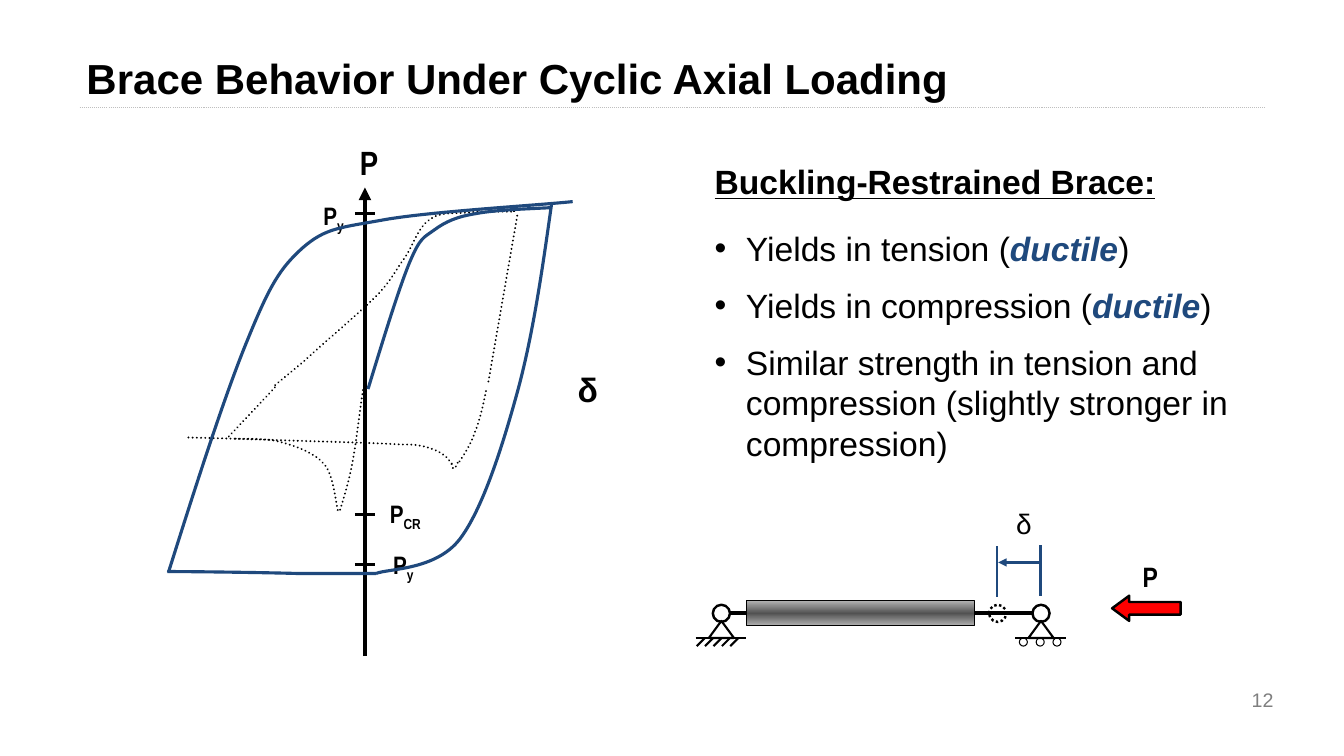
import copy

from lxml import etree
from pptx import Presentation
from pptx.dml.color import RGBColor
from pptx.enum import dml, shapes, text
from pptx.oxml.ns import qn
from pptx.util import Inches, Pt

BLACK = RGBColor(0x00, 0x00, 0x00)
BLUE = RGBColor(0x1F, 0x49, 0x7D)
RED = RGBColor(0xFF, 0x00, 0x00)
RULE_GREY = RGBColor(0xBF, 0xBF, 0xBF)
NUMBER_GREY = RGBColor(0x7F, 0x7F, 0x7F)
STEEL_LIGHT = RGBColor(0xB2, 0xB2, 0xB2)
STEEL_DARK = RGBColor(0x52, 0x52, 0x52)

SHAPE = shapes.MSO_SHAPE
ALIGN = text.PP_ALIGN

# A curve is a start point and triples of cubic Bezier points; two points make a line.
BUCKLING_CURVES = [
    [(2.27, 4.33), (2.73, 3.84)],
    [(4.82, 3.88), (4.79, 4.03), (4.76, 4.17), (4.71, 4.29),
     (4.67, 4.41), (4.61, 4.5), (4.55, 4.59)],
    [(3.6, 3.87), (3.56, 4.14), (3.53, 4.42), (3.49, 4.62),
     (3.45, 4.82), (3.4, 4.97), (3.37, 5.07)],
    [(3.35, 5.06), (3.33, 4.99), (3.31, 4.72), (3.22, 4.61),
     (3.13, 4.5), (2.95, 4.43), (2.8, 4.39),
     (2.65, 4.34), (2.4, 4.36), (2.3, 4.35)],
    [(2.73, 3.82), (2.85, 3.72), (2.98, 3.62), (3.14, 3.47),
     (3.31, 3.32), (3.6, 3.07), (3.75, 2.92),
     (3.89, 2.77), (3.93, 2.67), (4.02, 2.55),
     (4.1, 2.43), (4.15, 2.25), (4.26, 2.18),
     (4.36, 2.1), (4.49, 2.12), (4.63, 2.11),
     (4.77, 2.09), (4.93, 2.1), (5.09, 2.1)],
    [(5.13, 2.14), (4.84, 3.81)],
    [(4.48, 4.6), (4.45, 4.56), (4.42, 4.52), (4.38, 4.5),
     (4.34, 4.47), (4.28, 4.45), (4.21, 4.43),
     (4.15, 4.42), (4.15, 4.41), (3.98, 4.41),
     (3.81, 4.4), (3.53, 4.39), (3.18, 4.38),
     (2.82, 4.37), (2.33, 4.35), (1.84, 4.34)],
    [(4.54, 4.59), (4.53, 4.62), (4.51, 4.65), (4.5, 4.65),
     (4.49, 4.65), (4.48, 4.61), (4.48, 4.6)],
]
RESTRAINED_CURVES = [
    [(3.65, 3.86), (3.8, 3.37), (3.95, 2.88), (4.06, 2.61),
     (4.17, 2.35), (4.2, 2.36), (4.31, 2.28),
     (4.42, 2.2), (4.53, 2.15), (4.72, 2.12),
     (4.92, 2.08), (5.32, 2.07), (5.47, 2.06)],
    [(5.47, 2.03), (5.38, 2.67), (5.29, 3.3), (5.14, 3.86),
     (4.99, 4.41), (4.79, 5.05), (4.56, 5.35),
     (4.32, 5.66), (3.85, 5.64), (3.73, 5.69)],
    [(3.73, 5.69), (3.5, 5.69), (3.33, 5.69), (2.98, 5.69),
     (2.64, 5.68), (1.93, 5.67), (1.66, 5.67)],
    [(1.67, 5.68), (1.95, 4.79), (2.24, 3.89), (2.46, 3.36),
     (2.68, 2.82), (2.78, 2.66), (3, 2.46),
     (3.23, 2.26), (3.37, 2.26), (3.81, 2.18),
     (4.26, 2.1), (5.29, 2.04), (5.68, 2)],
]


def style_line(line, color, width, dotted=False):
    line.color.rgb = color
    line.width = Pt(width)
    if dotted:
        line.dash_style = dml.MSO_LINE.ROUND_DOT


def add_line(page, start, end, width=1.5, color=BLACK, dotted=False, arrow=False):
    """Draw a straight line, with an optional arrowhead at its end."""
    line = page.shapes.add_connector(
        shapes.MSO_CONNECTOR.STRAIGHT, *map(Inches, (*start, *end)))
    style_line(line.line, color, width, dotted)
    if arrow:
        etree.SubElement(line.line._ln, qn("a:tailEnd"), type="triangle")
    etree.SubElement(line._element.spPr, qn("a:effectLst"))


def add_shape(page, kind, left, top, width, height, line_width, fill=None, dotted=False):
    shape = page.shapes.add_shape(kind, *map(Inches, (left, top, width, height)))
    shape.shadow.inherit = False
    if fill is None:
        shape.fill.background()
    else:
        shape.fill.solid()
        shape.fill.fore_color.rgb = fill
    style_line(shape.line, BLACK, line_width, dotted)
    return shape


def add_curve(page, curve, color, width, dotted=False):
    """Draw the outline through the knots, then bend each segment to its controls."""
    points = [tuple(map(Inches, point)) for point in curve]
    knots = points if len(points) == 2 else points[::3]
    builder = page.shapes.build_freeform(*knots[0])
    builder.add_line_segments(knots[1:], close=False)
    shape = builder.convert_to_shape()
    shape.shadow.inherit = False
    shape.fill.background()
    style_line(shape.line, color, width, dotted)
    if len(points) > 2:
        segments = list(shape._element.spPr.iter(qn("a:lnTo")))
        for index, segment in enumerate(segments):
            segment.tag = qn("a:cubicBezTo")
            controls = points[3 * index + 1:3 * index + 3]
            for position, (x, y) in enumerate(controls):
                control = etree.Element(
                    qn("a:pt"), x=str(x - shape.left), y=str(y - shape.top))
                segment.insert(position, control)
    if dotted:
        shape.line._ln.set("cap", "rnd")


def add_text_frame(page, left, top, width, height):
    box = page.shapes.add_textbox(*map(Inches, (left, top, width, height)))
    box.text_frame.word_wrap = True
    return box.text_frame


def set_font(font, size, name="Arial", color=BLACK, bold=False):
    font.size, font.name, font.bold = Pt(size), name, bold
    font.color.rgb = color


def add_label(page, place, words, size, name="Arial", color=BLACK, bold=False,
              align=ALIGN.CENTER, subscript=None):
    frame = add_text_frame(page, *place)
    para = frame.paragraphs[0]
    para.alignment = align
    set_font(para.font, size, name, color, bold)
    para.add_run().text = words
    if subscript:
        span = para.add_run()
        span.text = subscript
        span._r.get_or_add_rPr().set("baseline", "-25000")
    return frame


def add_bullets(page, place, bullets):
    """Each bullet is (before, emphasis, after), or one plain part."""
    frame = add_text_frame(page, *place)
    for index, parts in enumerate(bullets):
        para = frame.add_paragraph() if index else frame.paragraphs[0]
        para.space_before = Pt(12 if index else 0)
        set_font(para.font, 24)
        properties = para._p.get_or_add_pPr()
        properties.set("marL", str(Inches(0.31)))
        properties.set("indent", str(Inches(-0.31)))
        defaults = properties.find(qn("a:defRPr"))
        defaults.addprevious(etree.Element(qn("a:buFont"), typeface="Arial"))
        defaults.addprevious(etree.Element(qn("a:buChar"), char="•"))
        for position, part in enumerate(parts):
            span = para.add_run()
            span.text = part
            if position == 1:
                span.font.bold = span.font.italic = True
                span.font.color.rgb = BLUE


def add_steel_tube(page, place):
    tube = add_shape(page, SHAPE.RECTANGLE, *place, 0.75)
    tube.fill.gradient()
    tube.fill.gradient_angle = 90
    stop_list = tube._element.spPr.find(".//" + qn("a:gsLst"))
    stop_list.insert(1, copy.deepcopy(stop_list[0]))
    colors = (STEEL_LIGHT, STEEL_DARK, STEEL_LIGHT)
    for index, (stop, color) in enumerate(zip(tube.fill.gradient_stops, colors)):
        stop.position = index / 2
        stop.color.rgb = color


def add_support(page, center):
    add_shape(page, SHAPE.ISOSCELES_TRIANGLE, center - 0.12, 6.16, 0.25, 0.17, 1.5)
    add_shape(page, SHAPE.OVAL, center - 0.08, 6, 0.17, 0.17, 1.75)
    add_line(page, (center - 0.25, 6.33), (center + 0.25, 6.33))


def draw_hysteresis(page):
    add_line(page, (3.62, 6.51), (3.62, 1.86), 3, arrow=True)
    for y in (2.12, 5.1, 5.6):
        add_line(page, (3.52, y), (3.72, y), 2.25)
    add_label(page, (3.37, 1.36, 0.58, 0.5), "P", 24, "Arial Narrow", bold=True)
    for left, top, subscript in ((2.91, 1.94, "y"), (3.62, 4.89, "CR"), (3.6, 5.4, "y")):
        add_label(page, (left, top, 0.8, 0.4), "P", 18, "Arial Narrow", bold=True,
                  subscript=subscript)
    add_label(page, (5.54, 3.61, 0.58, 0.5), "δ", 24, bold=True)
    add_line(page, (5.09, 2.09), (5.13, 2.09), dotted=True)
    for curve in BUCKLING_CURVES:
        add_curve(page, curve, BLACK, 1.5, dotted=True)
    for curve in RESTRAINED_CURVES:
        add_curve(page, curve, BLUE, 2.25)


def draw_brace(page):
    add_line(page, (7.24, 6.08), (10.24, 6.08), 3)
    for center in (7.15, 10.32):
        add_support(page, center)
    for index in range(5):
        x = 6.99 + index / 12
        add_line(page, (x, 6.33), (x - 0.08, 6.41))
    for index in range(3):
        add_shape(page, SHAPE.OVAL, 10.11 + index / 6, 6.33, 0.08, 0.08, 0.75)
    add_shape(page, SHAPE.OVAL, 9.81, 6, 0.17, 0.17, 1.75, dotted=True)
    add_steel_tube(page, (7.4, 5.96, 2.27, 0.25))
    for x, bottom in ((10.32, 5.91), (9.89, 5.92)):
        add_line(page, (x, bottom), (x, bottom - 0.5), color=BLUE)
    add_line(page, (10.32, 5.58), (9.9, 5.58), color=BLUE, arrow=True)
    add_label(page, (9.88, 4.98, 0.55, 0.43), "δ", 20)
    load = add_shape(page, SHAPE.LEFT_ARROW, 11.03, 5.91, 0.68, 0.25, 1.75, RED)
    load.adjustments[1] = 0.68
    add_label(page, (11.03, 5.5, 0.76, 0.43), "P", 20, "Arial Narrow", bold=True)


def main():
    deck = Presentation()
    deck.slide_width, deck.slide_height = Inches(13.33), Inches(7.5)
    page = deck.slides.add_slide(deck.slide_layouts[6])
    add_line(page, (0.79, 1.07), (12.55, 1.07), 0.75, RULE_GREY, dotted=True)
    add_label(page, (0.76, 0.47, 11.97, 0.68), "Brace Behavior Under Cyclic Axial Loading",
              30, bold=True, align=ALIGN.LEFT)
    number = add_label(page, (9.62, 6.74, 3.11, 0.4), "12", 14, color=NUMBER_GREY,
                       align=ALIGN.RIGHT)
    number.vertical_anchor = text.MSO_ANCHOR.MIDDLE
    draw_hysteresis(page)
    draw_brace(page)
    heading = add_label(page, (6.99, 1.55, 5.4, 0.5), "Buckling-Restrained Brace:", 24,
                        bold=True, align=ALIGN.LEFT)
    heading.paragraphs[0].font.underline = True
    add_bullets(page, (6.99, 2.21, 5.79, 2.52), [
        ("Yields in tension (", "ductile", ")"),
        ("Yields in compression (", "ductile", ")"),
        ("Similar strength in tension and compression (slightly stronger in compression)",),
    ])
    deck.save("out.pptx")


if __name__ == "__main__":
    main()
